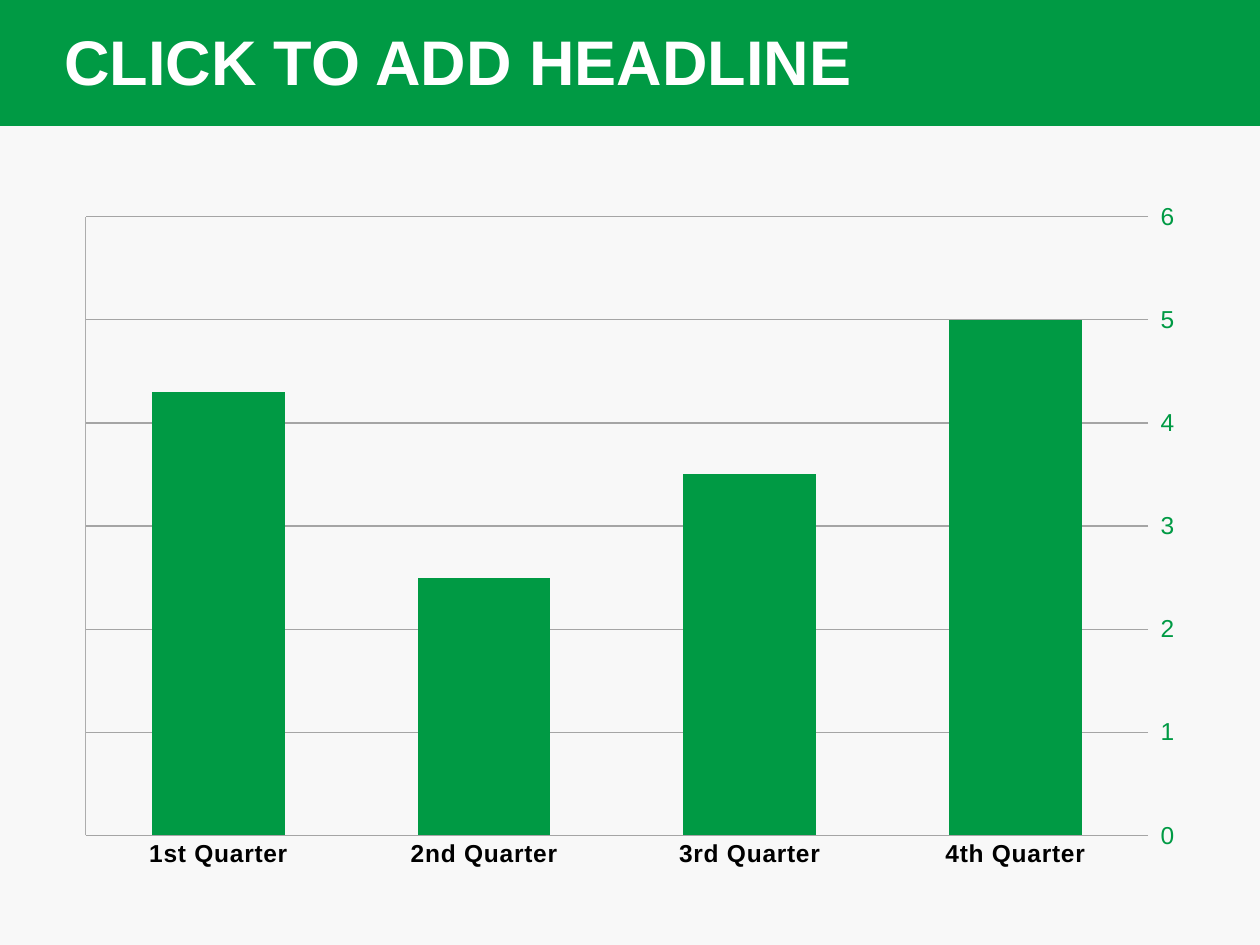
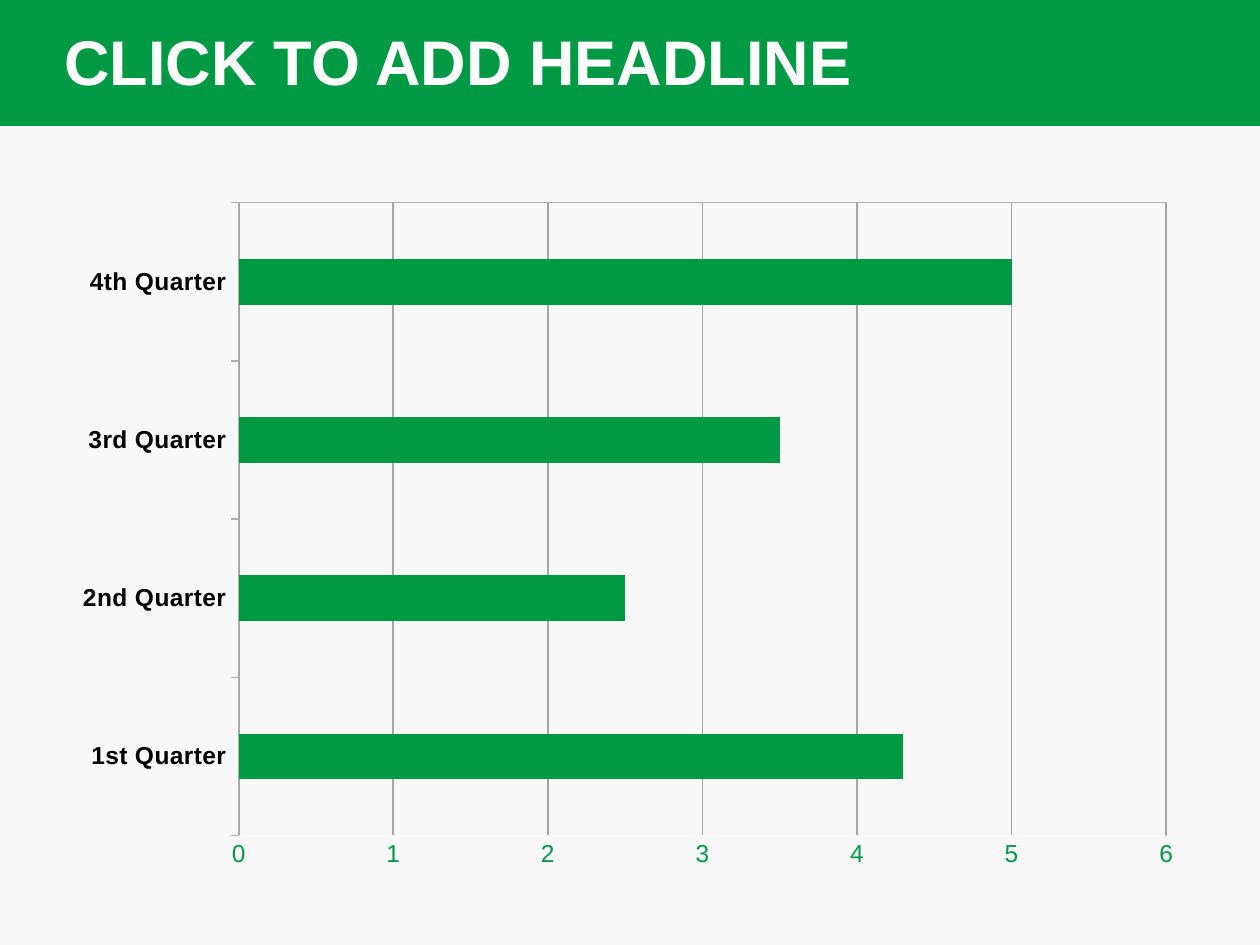
from lxml import etree
from pptx import Presentation
from pptx.chart.data import CategoryChartData
from pptx.dml.color import RGBColor
from pptx.enum.chart import XL_CHART_TYPE as ChartType
from pptx.enum.chart import XL_TICK_LABEL_POSITION as LabelPos
from pptx.enum.chart import XL_TICK_MARK as TickMark
from pptx.enum.shapes import MSO_SHAPE as Shape
from pptx.enum.text import MSO_ANCHOR as Anchor
from pptx.oxml import parse_xml
from pptx.oxml.ns import nsdecls, qn
from pptx.util import Inches, Pt

GREEN = RGBColor(0x00, 0x9A, 0x44)
WHITE = RGBColor(0xFF, 0xFF, 0xFF)
BLACK = RGBColor(0x00, 0x00, 0x00)
PAPER = RGBColor(0xF8, 0xF8, 0xF8)
GREY = RGBColor(0xA5, 0xA5, 0xA5)
LIGHT_GREY = RGBColor(0xAD, 0xAD, 0xAD)
FONT = "Arial"
HEADLINE = "CLICK TO ADD HEADLINE"
QUARTERS = ["1st Quarter", "2nd Quarter", "3rd Quarter", "4th Quarter"]
VALUES = [4.3, 2.5, 3.5, 5]


def style_font(font, size, color, bold=False, name=FONT):
    font.name, font.size, font.bold = name, Pt(size), bold
    font.color.rgb = color


def style_line(line, color, width=0.75):
    line.color.rgb = color
    line.width = Pt(width)


def add_headline_slide(prs, headline):
    s = prs.slides.add_slide(prs.slide_layouts[6])
    s.background.fill.solid()
    s.background.fill.fore_color.rgb = PAPER

    band = s.shapes.add_shape(Shape.RECTANGLE, 0, 0, prs.slide_width, Inches(1))
    band.shadow.inherit = False
    band.fill.solid()
    band.fill.fore_color.rgb = GREEN
    band.line.fill.background()

    box = s.shapes.add_textbox(Inches(0.51), Inches(0.19), Inches(7.5), Inches(0.65))
    tf = box.text_frame
    tf.word_wrap = True
    tf.vertical_anchor = Anchor.MIDDLE
    tf.margin_left = 0
    tf.text = headline
    p = tf.paragraphs[0]
    p.line_spacing = 0.9
    style_font(p.runs[0].font, 36, WHITE, bold=True)
    return s


def set_plot_frame(chart, x, y, w, h):
    """Place the inner plot area, in shares of the chart's size."""
    plot_area = chart._chartSpace.chart.plotArea
    for old in plot_area.findall(qn("c:layout")):
        plot_area.remove(old)
    layout = etree.Element(qn("c:layout"))
    manual = etree.SubElement(layout, qn("c:manualLayout"))
    for tag, val in (("layoutTarget", "inner"), ("xMode", "edge"), ("yMode", "edge"),
                     ("x", x), ("y", y), ("w", w), ("h", h)):
        etree.SubElement(manual, qn("c:" + tag)).set("val", str(val))
    plot_area.insert(0, layout)


def add_plot_border(chart, color):
    chart._chartSpace.chart.plotArea.append(parse_xml(
        f'<c:spPr {nsdecls("c", "a")}><a:noFill/><a:ln w="{Pt(0.75)}"><a:solidFill>'
        f'<a:srgbClr val="{color}"/></a:solidFill></a:ln></c:spPr>'))


def style_axis(axis, line_color, label_color, bold=False, tick=TickMark.NONE):
    axis.major_tick_mark = tick
    axis.minor_tick_mark = TickMark.NONE
    style_line(axis.format.line, line_color)
    style_font(axis.tick_labels.font, 14, label_color, bold)


def set_label_spacing(axis, hundredths):
    """Widen the letter spacing of the labels, in hundredths of a point."""
    for props in axis._element.iter(qn("a:defRPr")):
        props.set("spc", str(hundredths))


def add_quarter_chart(s, kind, gap, frame, cat_line, val_line, grid_width,
                      spacing, cat_tick=TickMark.NONE):
    data = CategoryChartData()
    data.categories = QUARTERS
    data.add_series("Series 1", VALUES)
    chart = s.shapes.add_chart(kind, Inches(0.5), Inches(1.5), Inches(9),
                               Inches(5.5), data).chart
    chart.has_legend = False
    chart.has_title = False
    style_font(chart.font, 10, BLACK, name="Calibri")
    set_plot_frame(chart, *frame)

    plot = chart.plots[0]
    plot.vary_by_categories = False
    plot.gap_width = gap
    fill = plot.series[0].format.fill
    fill.solid()
    fill.fore_color.rgb = GREEN

    cats, vals = chart.category_axis, chart.value_axis
    style_axis(cats, cat_line, BLACK, bold=True, tick=cat_tick)
    set_label_spacing(cats, spacing)
    style_axis(vals, val_line, GREEN)
    vals.minimum_scale, vals.maximum_scale, vals.major_unit = 0, 6, 1
    vals.has_major_gridlines = True
    style_line(vals.major_gridlines.format.line, GREY, grid_width)
    vals.tick_labels.number_format = "General"
    vals.tick_labels.number_format_is_linked = False
    return chart


def main():
    prs = Presentation()
    prs.slide_width, prs.slide_height = Inches(10), Inches(7.5)

    columns = add_quarter_chart(
        add_headline_slide(prs, HEADLINE), ChartType.COLUMN_CLUSTERED, gap=100,
        frame=(0.02, 0.04, 0.937, 0.893), cat_line=GREY, val_line=LIGHT_GREY,
        grid_width=0.75, spacing=30)
    columns.plots[0].overlap = -24
    columns.value_axis.tick_label_position = LabelPos.HIGH

    bars = add_quarter_chart(
        add_headline_slide(prs, HEADLINE), ChartType.BAR_CLUSTERED, gap=247,
        frame=(0.155, 0.02, 0.818, 0.913), cat_line=LIGHT_GREY, val_line=WHITE,
        grid_width=1, spacing=10, cat_tick=TickMark.OUTSIDE)
    add_plot_border(bars, LIGHT_GREY)

    prs.save("out.pptx")


if __name__ == "__main__":
    main()
